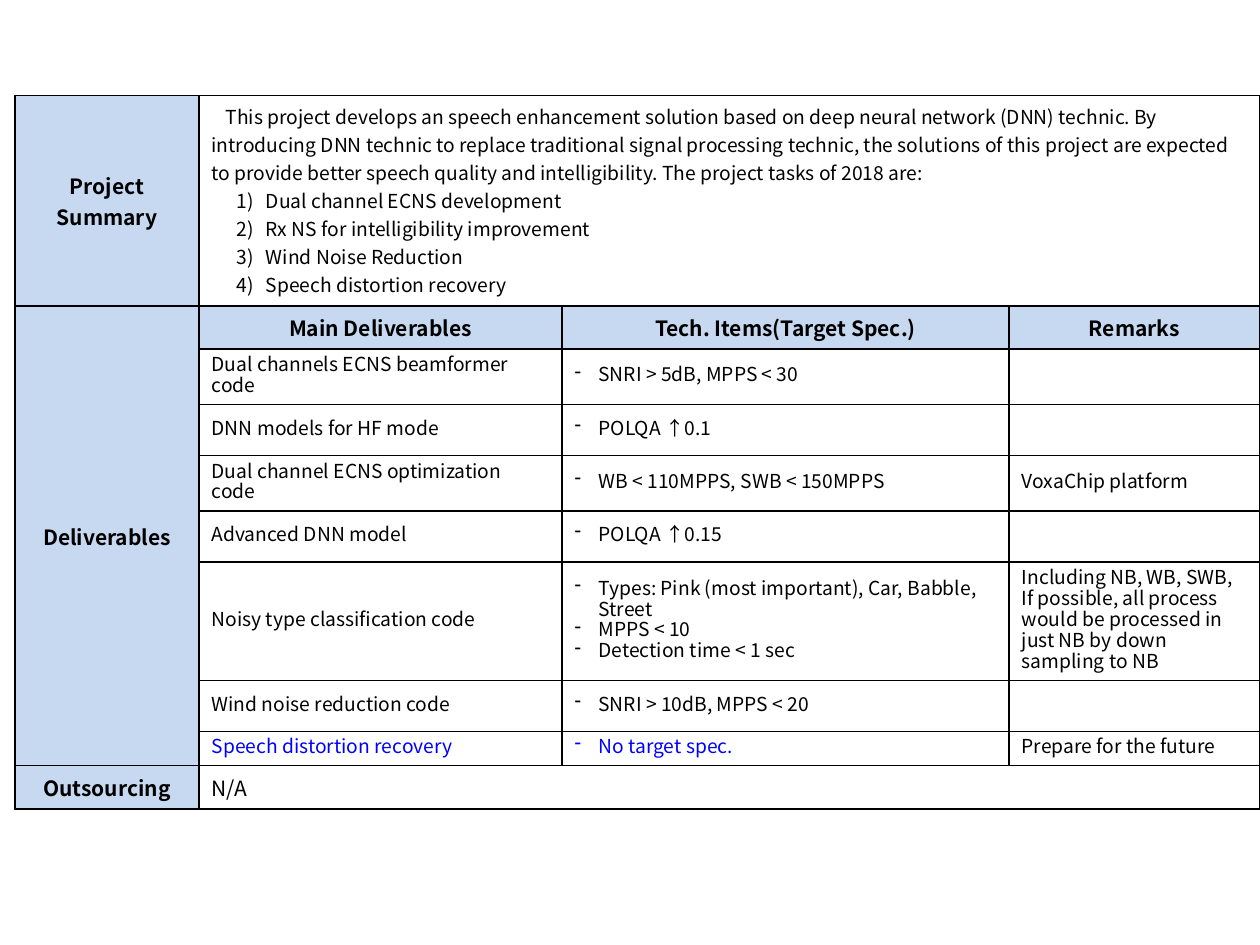
from lxml import etree
from pptx import Presentation
from pptx.dml.color import RGBColor
from pptx.enum.text import MSO_ANCHOR, PP_ALIGN
from pptx.oxml.ns import qn
from pptx.util import Inches, Pt

CENTER, LEFT = PP_ALIGN.CENTER, PP_ALIGN.LEFT
TOP, MIDDLE = MSO_ANCHOR.TOP, MSO_ANCHOR.MIDDLE
FONT = "Noto Sans CJK KR"
BLACK, BLUE, HEADER_FILL = "000000", "0000FF", "C6D9F1"

COLUMN_WIDTHS = [1.46, 1.68, 1.2, 0.61, 1.65, 1.29, 0.35, 1.64]
ROW_HEIGHTS = [1.67, 0.34, 0.44, 0.27, 0.44, 0.32, 0.94, 0.32, 0.27, 0.34]
GROUPS = [(1, 2), (3, 5), (6, 7)]
LAST_COLUMN, LAST_ROW = len(COLUMN_WIDTHS) - 1, len(ROW_HEIGHTS) - 1

HEADING = {"size": 12, "bold": True, "align": CENTER}
BODY = {"spacing": Pt(12)}
DASH = {"spacing": Pt(12), "margin": 0.19, "indent": -0.19, "bullet": ("a:buChar", "char", "-")}
NUMBERED = {"margin": 0.43, "indent": -0.23, "bullet": ("a:buAutoNum", "type", "arabicParenR")}

SUMMARY = (
    "This project develops an speech enhancement solution based on deep neural network (DNN) "
    "technic. By introducing DNN technic to replace traditional signal processing technic, the "
    "solutions of this project are expected to provide better speech quality and intelligibility. "
    "The project tasks of 2018 are:"
)
TASKS = [
    "Dual channel ECNS development",
    "Rx NS for intelligibility improvement",
    "Wind Noise Reduction",
    "Speech distortion recovery",
]
DELIVERABLES = [
    ("Dual channels ECNS beamformer code", ["SNRI > 5dB, MPPS < 30"], ""),
    ("DNN models for HF mode", ["POLQA ↑0.1"], ""),
    ("Dual channel ECNS optimization code", ["WB < 110MPPS, SWB < 150MPPS"], "VoxaChip platform"),
    ("Advanced DNN model", ["POLQA ↑0.15"], ""),
    (
        "Noisy type classification code",
        ["Types: Pink (most important), Car, Babble, Street", "MPPS < 10", "Detection time < 1 sec"],
        "Including NB, WB, SWB, If possible, all process would be processed in just NB "
        "by down sampling to NB",
    ),
    ("Wind noise reduction code", ["SNRI > 10dB, MPPS < 20"], ""),
    ("Speech distortion recovery", ["No target spec."], "Prepare for the future"),
]


def color(value):
    return RGBColor.from_string(value)


def write_cell(cell, lines, fill=None, anchor=MIDDLE):
    cell.vertical_anchor = anchor
    if fill:
        cell.fill.solid()
        cell.fill.fore_color.rgb = color(fill)
    for index, (text, style) in enumerate(lines):
        frame = cell.text_frame
        paragraph = frame.add_paragraph() if index else frame.paragraphs[0]
        paragraph.alignment = style.get("align", LEFT)
        properties = paragraph._p.get_or_add_pPr()
        for name, key in {"marL": "margin", "indent": "indent"}.items():
            properties.set(name, str(Inches(style.get(key, 0))))
        if "bullet" in style:
            tag, name, value = style["bullet"]
            etree.SubElement(properties, qn(tag)).set(name, value)
        if "spacing" in style:
            paragraph.line_spacing = style["spacing"]
        if text:
            run = paragraph.add_run()
            run.text = text
            font_values = {
                "name": FONT,
                "size": Pt(style.get("size", 11)),
                "bold": style.get("bold", False),
            }
            for name, value in font_values.items():
                setattr(run.font, name, value)
            run.font.color.rgb = color(style.get("color", BLACK))


presentation = Presentation()
presentation.slide_width, presentation.slide_height = Inches(10), Inches(7.5)
slide = presentation.slides.add_slide(presentation.slide_layouts[6])

table = slide.shapes.add_table(
    len(ROW_HEIGHTS), len(COLUMN_WIDTHS), Inches(0.12), Inches(0.76),
    Inches(sum(COLUMN_WIDTHS)), Inches(sum(ROW_HEIGHTS)),
).table
table.first_row = table.horz_banding = False
for column, width in zip(table.columns, COLUMN_WIDTHS):
    column.width = Inches(width)
for row, height in zip(table.rows, ROW_HEIGHTS):
    row.height = Inches(height)

for cell in table.iter_cells():
    cell.margin_left = cell.margin_right = Inches(0.1)
    cell.margin_top = cell.margin_bottom = Inches(0.05)
    cell_properties = cell._tc.get_or_add_tcPr()
    for side in ("a:lnL", "a:lnR", "a:lnT", "a:lnB"):
        line = etree.SubElement(cell_properties, qn(side), w=str(Pt(1)))
        line_fill = etree.SubElement(line, qn("a:solidFill"))
        etree.SubElement(line_fill, qn("a:srgbClr"), val=BLACK)
    cell.fill.background()

for row in (0, LAST_ROW):
    table.cell(row, 1).merge(table.cell(row, LAST_COLUMN))
table.cell(1, 0).merge(table.cell(LAST_ROW - 1, 0))
for row in range(1, LAST_ROW):
    for first, last in GROUPS:
        table.cell(row, first).merge(table.cell(row, last))

for row, titles in {0: ["Project", "Summary"], 1: ["Deliverables"], LAST_ROW: ["Outsourcing"]}.items():
    write_cell(table.cell(row, 0), [(title, HEADING) for title in titles], HEADER_FILL)
for (first, _), title in zip(GROUPS, ["Main Deliverables", "Tech. Items(Target Spec.)", "Remarks"]):
    write_cell(table.cell(1, first), [(title, HEADING)], HEADER_FILL)

summary_lines = [(SUMMARY, {"indent": 0.11})] + [(task, NUMBERED) for task in TASKS]
write_cell(table.cell(0, 1), summary_lines, anchor=TOP)
write_cell(table.cell(LAST_ROW, 1), [("N/A", {"size": 12})], "FFFFFF")

for row, (deliverable, items, remark) in enumerate(DELIVERABLES, start=2):
    accent = {"color": BLUE if row == LAST_ROW - 1 else BLACK}
    write_cell(table.cell(row, 1), [(deliverable, BODY | accent)])
    write_cell(table.cell(row, 3), [(item, DASH | accent) for item in items])
    write_cell(table.cell(row, 6), [(remark, BODY)])

presentation.save("out.pptx")
